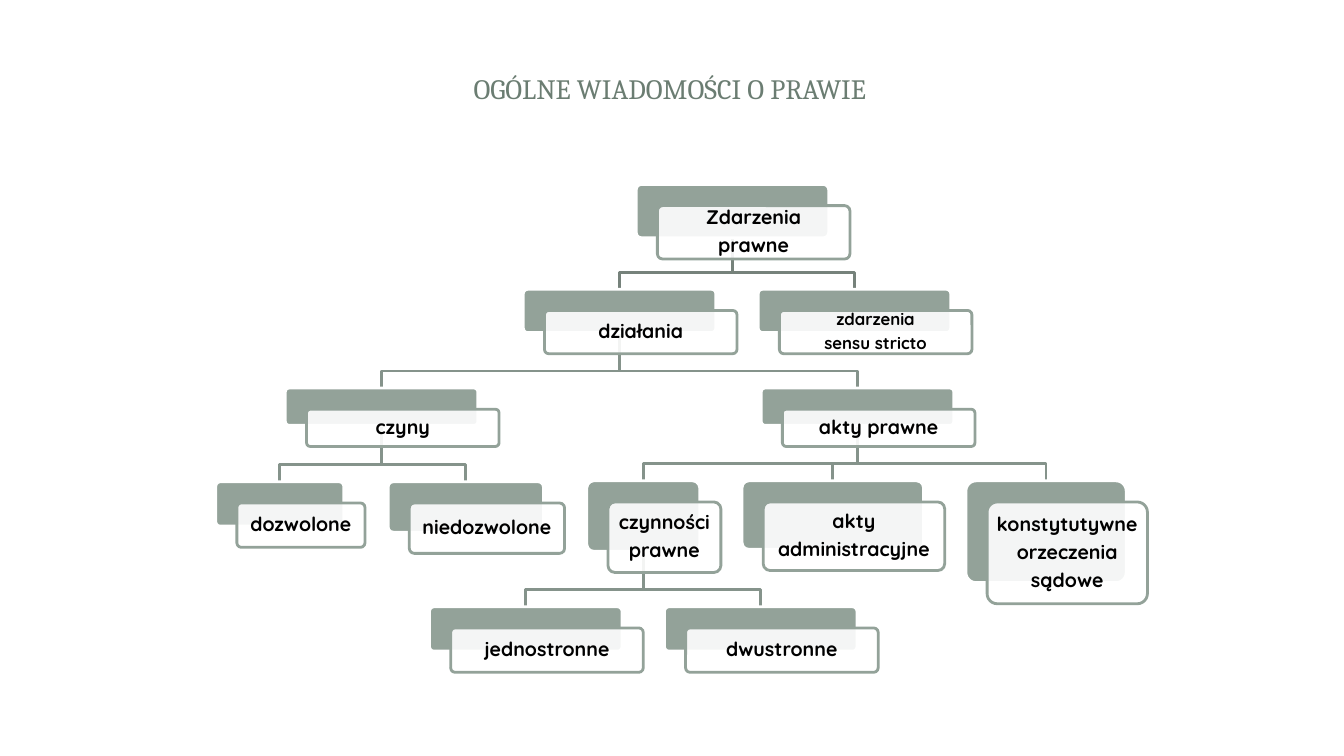
from pptx import Presentation
from pptx.dml.color import RGBColor
from pptx.enum import shapes, text
from pptx.oxml import parse_xml
from pptx.oxml.ns import nsdecls
from pptx.util import Inches, Pt

SAGE, WHITE = "93A299", "FFFFFF"
OFFSET = 0.21  # shift of each front card from its back card
DROP = 0.17    # height of a branch's last stretch, above the child

# name: (parent, left, top, width, height, lines, size)
NODES = {
    "zdarzenia": (None, 6.31, 1.83, 1.91, 0.53, ["Zdarzenia", "prawne"], 14),
    "działania": ("zdarzenia", 5.19, 2.87, 1.91, 0.43, ["działania"], 14),
    "sensu stricto": ("zdarzenia", 7.52, 2.87, 1.91, 0.43,
                      ["zdarzenia", "sensu stricto"], 12),
    "czyny": ("działania", 2.83, 3.85, 1.91, 0.37, ["czyny"], 14),
    "akty prawne": ("działania", 7.55, 3.85, 1.91, 0.37, ["akty prawne"], 14),
    "dozwolone": ("czyny", 2.14, 4.78, 1.27, 0.44, ["dozwolone"], 14),
    "niedozwolone": ("czyny", 3.85, 4.78, 1.54, 0.5, ["niedozwolone"], 14),
    "czynności": ("akty prawne", 5.82, 4.77, 1.12, 0.7, ["czynności", "prawne"], 14),
    "administracyjne": ("akty prawne", 7.36, 4.77, 1.8, 0.68,
                        ["akty", "administracyjne"], 14),
    "orzeczenia": ("akty prawne", 9.58, 4.77, 1.59, 1.01,
                   ["konstytutywne", "orzeczenia", "sądowe"], 14),
    "jednostronne": ("czynności", 4.26, 6.02, 1.91, 0.44, ["jednostronne"], 14),
    "dwustronne": ("czynności", 6.59, 6.02, 1.91, 0.44, ["dwustronne"], 14),
}


def rgb(value):
    return RGBColor.from_string(value)


def add_card(left, top, width, height, fill, line):
    sp = s.shapes.add_shape(shapes.MSO_SHAPE.ROUNDED_RECTANGLE, Inches(left),
                            Inches(top), Inches(width), Inches(height))
    sp.adjustments[0] = 0.1
    sp.shadow.inherit = False
    sp.fill.solid()
    sp.fill.fore_color.rgb = rgb(fill)
    sp.line.color.rgb = rgb(line)
    sp.line.width = Pt(2)
    return sp


prs = Presentation()
prs.slide_width, prs.slide_height = Inches(13.33), Inches(7.5)
s = prs.slides.add_slide(prs.slide_layouts[6])

title = s.shapes.add_textbox(Inches(2.13), Inches(0.45), Inches(9.03), Inches(0.86))
tf = title.text_frame
tf.word_wrap = True
tf.vertical_anchor = text.MSO_ANCHOR.MIDDLE
p = tf.paragraphs[0]
p.text = "OGÓLNE WIADOMOŚCI O PRAWIE"
p.alignment = text.PP_ALIGN.CENTER
p.font.name, p.font.size = "Cambria", Pt(20)
p.font.color.rgb = rgb("6B7D72")

# Branches lie behind all cards
for parent, left, top, width, height, lines, size in NODES.values():
    if parent is None:
        continue
    _, p_left, p_top, p_width, p_height, _, _ = NODES[parent]
    start_x, end_x = p_left + p_width / 2, left + width / 2
    bend = top - DROP
    builder = s.shapes.build_freeform(Inches(start_x), Inches(p_top + p_height))
    builder.add_line_segments(
        [(Inches(x), Inches(y)) for x, y in
         [(start_x, bend), (end_x, bend), (end_x, top)]], close=False)
    branch = builder.convert_to_shape()
    branch.shadow.inherit = False
    branch.fill.background()
    branch.line.color.rgb = rgb("76827B" if parent == "zdarzenia" else "85938B")
    branch.line.width = Pt(2)

for parent, left, top, width, height, lines, size in NODES.values():
    add_card(left, top, width, height, SAGE, WHITE)
    front = add_card(left + OFFSET, top + OFFSET, width, height, WHITE, SAGE)
    color = front.fill._xPr.solidFill[0]
    color.append(parse_xml(f'<a:alpha {nsdecls("a")} val="90000"/>'))
    tf = front.text_frame
    tf.word_wrap = True
    tf.vertical_anchor = text.MSO_ANCHOR.MIDDLE
    tf.margin_left = tf.margin_right = tf.margin_top = tf.margin_bottom = Inches(0.06)
    for i, line in enumerate(lines):
        p = tf.add_paragraph() if i else tf.paragraphs[0]
        p.text = line
        p.alignment = text.PP_ALIGN.CENTER
        p.line_spacing = 0.9
        p.space_after = Pt(0.35 * size)
        p.font.name, p.font.size, p.font.bold = "Quicksand", Pt(size), True
        p.font.color.rgb = rgb("000000")

prs.save("out.pptx")
